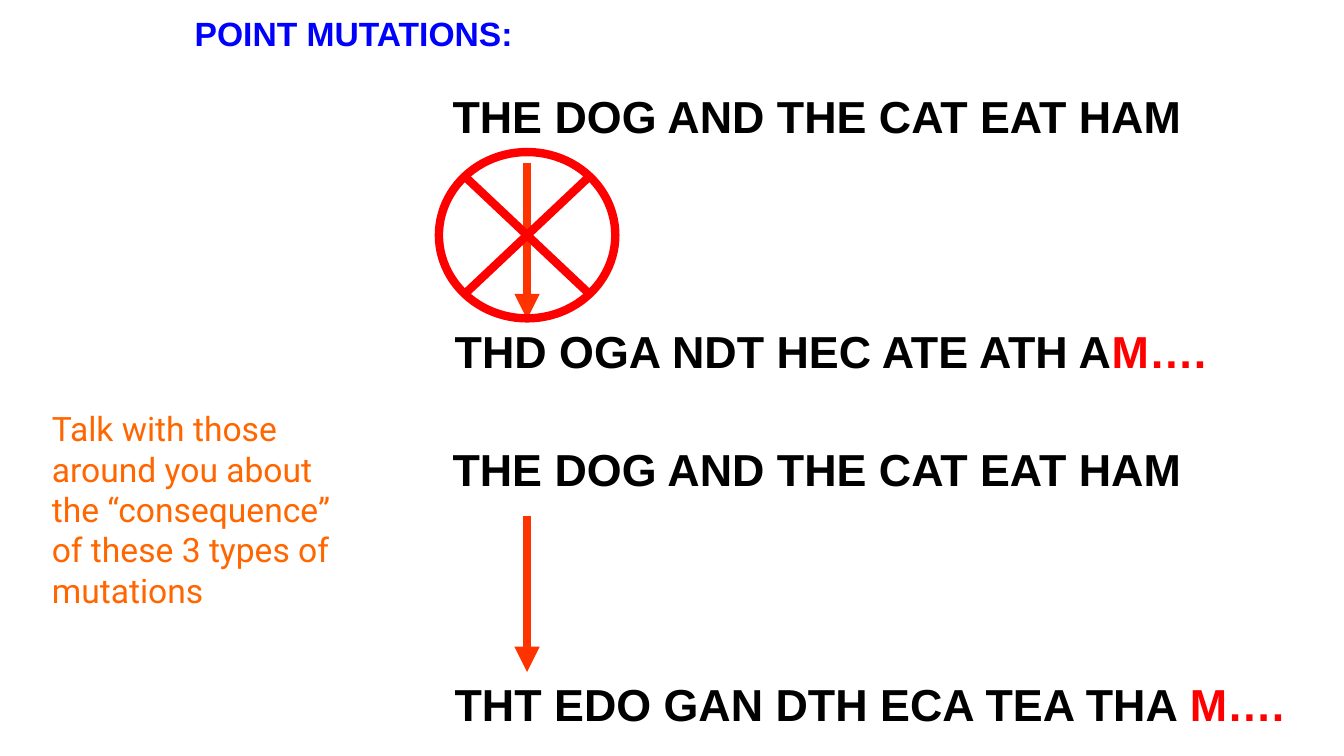
from dataclasses import dataclass

from lxml.etree import SubElement
from pptx import Presentation
from pptx.dml.color import RGBColor
from pptx.enum.shapes import MSO_CONNECTOR as Connector, MSO_SHAPE as Shape
from pptx.enum.text import MSO_AUTO_SIZE as AutoSize
from pptx.oxml.ns import qn
from pptx.slide import Slide
from pptx.util import Inches, Pt

BLUE = RGBColor(0x00, 0x00, 0xFF)
BLACK = RGBColor(0x00, 0x00, 0x00)
RED = RGBColor(0xFF, 0x00, 0x00)
ARROW_RED = RGBColor(0xFF, 0x33, 0x00)
ORANGE = RGBColor(0xFF, 0x66, 0x00)

COLUMNS, ROWS = 160, 90
CELL = Inches(7.5) / ROWS
LINE_WIDTH = Pt(6)
SENTENCE = "THE DOG AND THE CAT EAT HAM"
SENTENCE_HEIGHT = 7.7
ARROW_COLUMN = 62.75
ARROW_OFFSET = 9.4
RESULT_OFFSET = 28


@dataclass(frozen=True)
class Run:
    text: str
    color: RGBColor


@dataclass(frozen=True)
class Label:
    column: float
    row: float
    width: float
    height: float
    runs: tuple[Run, ...]
    size: int
    font: str = "Arial"
    bold: bool = True
    wrap: bool = False


@dataclass(frozen=True)
class Mutation:
    row: float
    kept: str
    result_width: float
    crossed_out: bool = False


TITLE = Label(22, 1, 40.8, 6, (Run("POINT MUTATIONS:", BLUE),), 24)
TASK = Label(
    5, 48, 37, 25.4,
    (Run("Talk with those around you about the “consequence” "
         "of these 3 types of mutations", ORANGE),),
    24, font="Roboto", bold=False, wrap=True,
)
MUTATIONS = (
    Mutation(10, "THD OGA NDT HEC ATE ATH A", 92.64, crossed_out=True),
    Mutation(52, "THT EDO GAN DTH ECA TEA THA ", 102),
)


def cells(count: float) -> int:
    return round(count * CELL)


def add_label(slide: Slide, label: Label) -> None:
    box = slide.shapes.add_textbox(
        cells(label.column), cells(label.row), cells(label.width), cells(label.height)
    )
    frame = box.text_frame
    frame.word_wrap = label.wrap
    frame.auto_size = AutoSize.SHAPE_TO_FIT_TEXT
    paragraph = frame.paragraphs[0]
    for part in label.runs:
        run = paragraph.add_run()
        run.text = part.text
        run.font.name = label.font
        run.font.size = Pt(label.size)
        run.font.bold = label.bold
        run.font.color.rgb = part.color


def add_arrow(slide: Slide, top: float, bottom: float) -> None:
    column = cells(ARROW_COLUMN)
    arrow = slide.shapes.add_connector(
        Connector.STRAIGHT, column, cells(top), column, cells(bottom)
    )
    arrow.line.color.rgb = ARROW_RED
    arrow.line.width = LINE_WIDTH
    properties = arrow.line._get_or_add_ln()
    SubElement(properties, qn("a:tailEnd"), type="triangle")
    SubElement(properties.getparent(), qn("a:effectLst"))


def add_cross(slide: Slide, row: float) -> None:
    width, height = 21, 19.8
    cross = slide.shapes.add_shape(
        Shape.FLOWCHART_SUMMING_JUNCTION,
        cells(ARROW_COLUMN - width / 2), cells(row), cells(width), cells(height),
    )
    cross.shadow.inherit = False
    cross.fill.background()
    cross.line.color.rgb = RED
    cross.line.width = LINE_WIDTH


def add_mutation(slide: Slide, mutation: Mutation) -> None:
    result_row = mutation.row + RESULT_OFFSET
    add_label(slide, Label(52.7, mutation.row, 90, SENTENCE_HEIGHT,
                           (Run(SENTENCE, BLACK),), 32))
    add_label(slide, Label(52.95, result_row, mutation.result_width, SENTENCE_HEIGHT,
                           (Run(mutation.kept, BLACK), Run("M….", RED)), 32))
    add_arrow(slide, mutation.row + ARROW_OFFSET, result_row)
    if mutation.crossed_out:
        add_cross(slide, mutation.row + 8.1)


def main() -> None:
    presentation = Presentation()
    presentation.slide_width = cells(COLUMNS)
    presentation.slide_height = cells(ROWS)
    slide = presentation.slides.add_slide(presentation.slide_layouts[6])
    add_label(slide, TITLE)
    for mutation in MUTATIONS:
        add_mutation(slide, mutation)
    add_label(slide, TASK)
    presentation.save("out.pptx")


if __name__ == "__main__":
    main()
